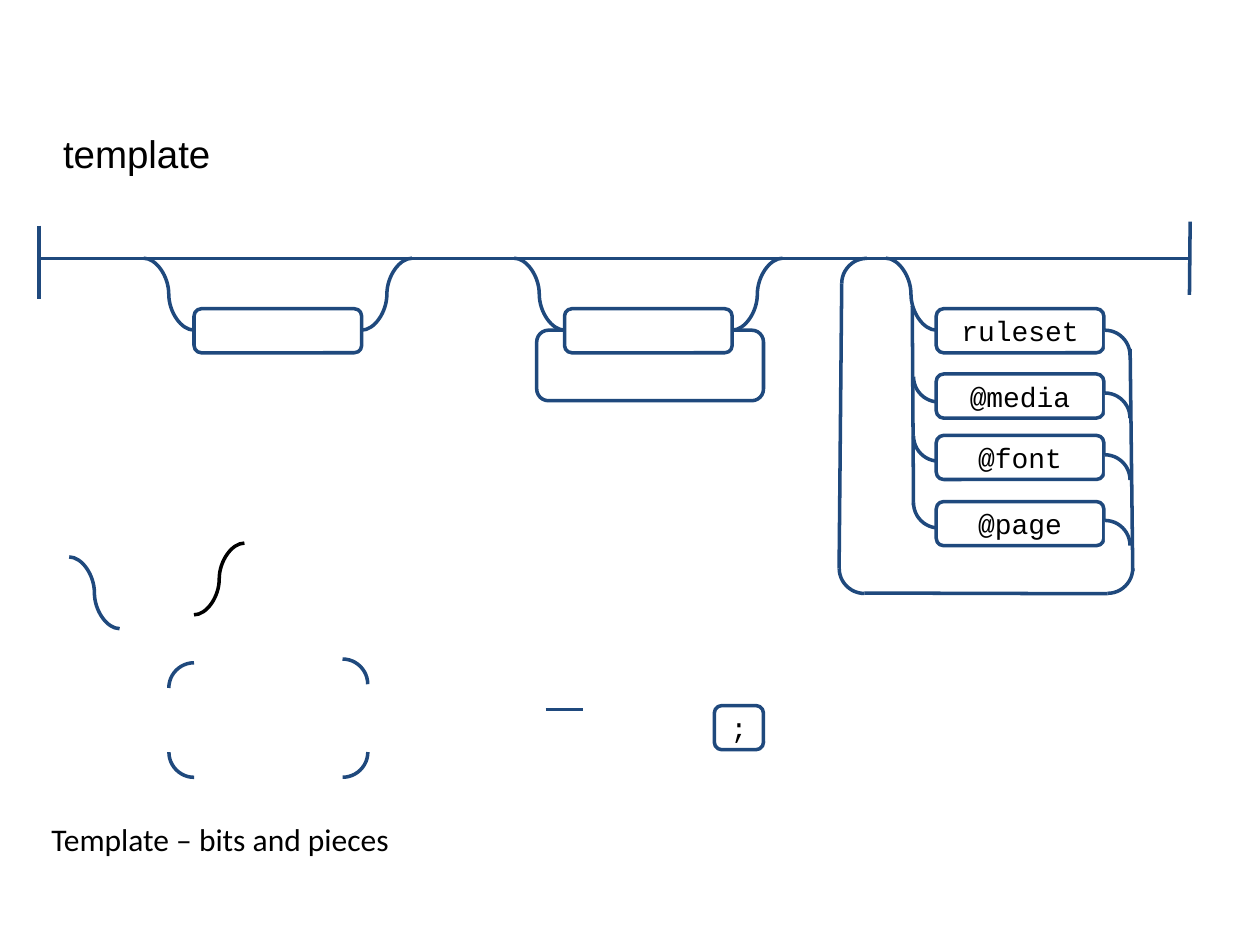
from pptx import Presentation
from pptx.dml.color import RGBColor
from pptx.enum.shapes import MSO_CONNECTOR as LINE, MSO_SHAPE as SHAPE
from pptx.enum.text import MSO_ANCHOR, MSO_AUTO_SIZE, PP_ALIGN
from pptx.oxml.ns import qn
from pptx.util import Pt
from lxml import etree

NAVY = RGBColor(0x1F, 0x49, 0x7D)
BLACK = RGBColor(0, 0, 0)
WHITE = RGBColor(0xFF, 0xFF, 0xFF)

TRACK_Y = 147.6
BOX_W, BOX_H = 95.8, 25.2
BOX_TOP, BOX_MID = 176.4, 188.7
CURVE_W, CURVE_H = 28.8, 41
ARC = 28.8
# Rotation that turns the arc into each corner
TOP_RIGHT, BOTTOM_RIGHT, BOTTOM_LEFT, TOP_LEFT = 0, 90, 180, 270

deck = Presentation()
deck.slide_width, deck.slide_height = Pt(720), Pt(540)
page = deck.slides.add_slide(deck.slide_layouts[5])


def add_outline(kind, left, top, width, height, text="", rotation=0):
    shape = page.shapes.add_shape(kind, Pt(left), Pt(top), Pt(width), Pt(height))
    shape.shadow.inherit = False
    shape.rotation = rotation
    shape.fill.solid()
    shape.fill.fore_color.rgb = WHITE
    shape.line.color.rgb = NAVY
    shape.line.width = Pt(2)
    if text:
        frame = shape.text_frame
        frame.text = text
        frame.vertical_anchor = MSO_ANCHOR.MIDDLE
        para = frame.paragraphs[0]
        para.alignment = PP_ALIGN.CENTER
        font = para.runs[0].font
        font.name, font.size = "Courier New", Pt(16)
        font.color.rgb = BLACK


def add_track(x1, y1, x2, y2, kind=LINE.STRAIGHT, width=2, color=NAVY):
    track = page.shapes.add_connector(kind, Pt(x1), Pt(y1), Pt(x2), Pt(y2))
    track.line.color.rgb = color
    track.line.width = Pt(width)
    etree.SubElement(track._element.spPr, qn("a:effectLst"))


# Loop behind the repeated element
add_outline(SHAPE.FLOWCHART_ALTERNATE_PROCESS, 306.7, 188.7, 129.6, 40.3)

# Main track
add_track(22.3, TRACK_Y, 679.7, TRACK_Y, width=1.5)

# Repeated and optional elements, each with a curve on both sides
for left in (322.6, 110.9):
    right = left + BOX_W
    add_outline(SHAPE.FLOWCHART_ALTERNATE_PROCESS, left, BOX_TOP, BOX_W, BOX_H)
    add_track(right, BOX_MID, right + CURVE_W, TRACK_Y, LINE.CURVE)
    add_track(left, BOX_MID, left - CURVE_W, TRACK_Y, LINE.CURVE)

# Choice of rules: entry curve, trunk, then one branch per rule
RULE_X = 535
add_track(RULE_X, BOX_MID, RULE_X - CURVE_W, TRACK_Y, LINE.CURVE)
add_track(521.3, 175, 522, 288.7)
for text, top, arc_top in (("ruleset", BOX_TOP, None), ("@page", 286.6, 272.9),
                           ("@font", 248.8, 234.7), ("@media", 213.7, 200.9)):
    if arc_top:
        add_outline(SHAPE.ARC, 522, arc_top, ARC, ARC, rotation=BOTTOM_LEFT)
    add_outline(SHAPE.FLOWCHART_ALTERNATE_PROCESS, RULE_X, top, BOX_W, BOX_H, text)

# End bars
add_track(22.3, 128.9, 22.3, 170.6)
add_track(680.1, 126.7, 679.7, 168.5)

# Exits from the rules and the way back to the main track
for top in (188.7, 224.6, 259.9, 297.4):
    add_outline(SHAPE.ARC, 617, top, ARC, ARC, rotation=TOP_RIGHT)
add_track(645.8, 199.4, 647.3, 326.2)
for left, top, corner in ((481, TRACK_Y, TOP_LEFT), (618.5, 310.3, BOTTOM_RIGHT),
                          (479.5, 310.3, BOTTOM_LEFT)):
    add_outline(SHAPE.ARC, left, top, ARC, ARC, rotation=corner)
add_track(493.9, 338.9, 632.9, 339.3)
add_track(481, 162, 479.5, 324.7)

# Spare parts: corners, curves, line and small box
for left, top, corner in ((96.5, 415.4, BOTTOM_LEFT), (181.4, 415.4, BOTTOM_RIGHT),
                          (96.5, 378.7, TOP_LEFT), (181.4, 376.6, TOP_RIGHT)):
    add_outline(SHAPE.ARC, left, top, ARC, ARC, rotation=corner)
add_track(311.8, 405.4, 333.4, 405.4, width=1.5)
add_track(68.4, 359.3, 68.4 - CURVE_W, 359.3 - CURVE_H, LINE.CURVE)
add_track(110.9, 351.4, 110.9 + CURVE_W, 351.4 - CURVE_H, LINE.CURVE, color=BLACK)
add_outline(SHAPE.FLOWCHART_ALTERNATE_PROCESS, 408.2, 403.2, 28.1, BOX_H, ";")

# Title and caption
title = page.shapes.title
caption = page.shapes.add_textbox(0, 0, 0, 0)
for box, text, left, top, height, name, size in (
        (title, "template", 28.8, 70.6, 33.8, "Arial", 22),
        (caption, "Template – bits and pieces", 22.3, 465.1, 28.8, "Calibri", 18)):
    box.left, box.top, box.width, box.height = Pt(left), Pt(top), Pt(424), Pt(height)
    frame = box.text_frame
    frame.text = text
    frame.word_wrap = True
    frame.auto_size = MSO_AUTO_SIZE.SHAPE_TO_FIT_TEXT
    frame.vertical_anchor = MSO_ANCHOR.TOP
    para = frame.paragraphs[0]
    para.alignment = PP_ALIGN.LEFT
    font = para.runs[0].font
    font.name, font.size = name, Pt(size)
    font.color.rgb = BLACK

deck.save("out.pptx")
